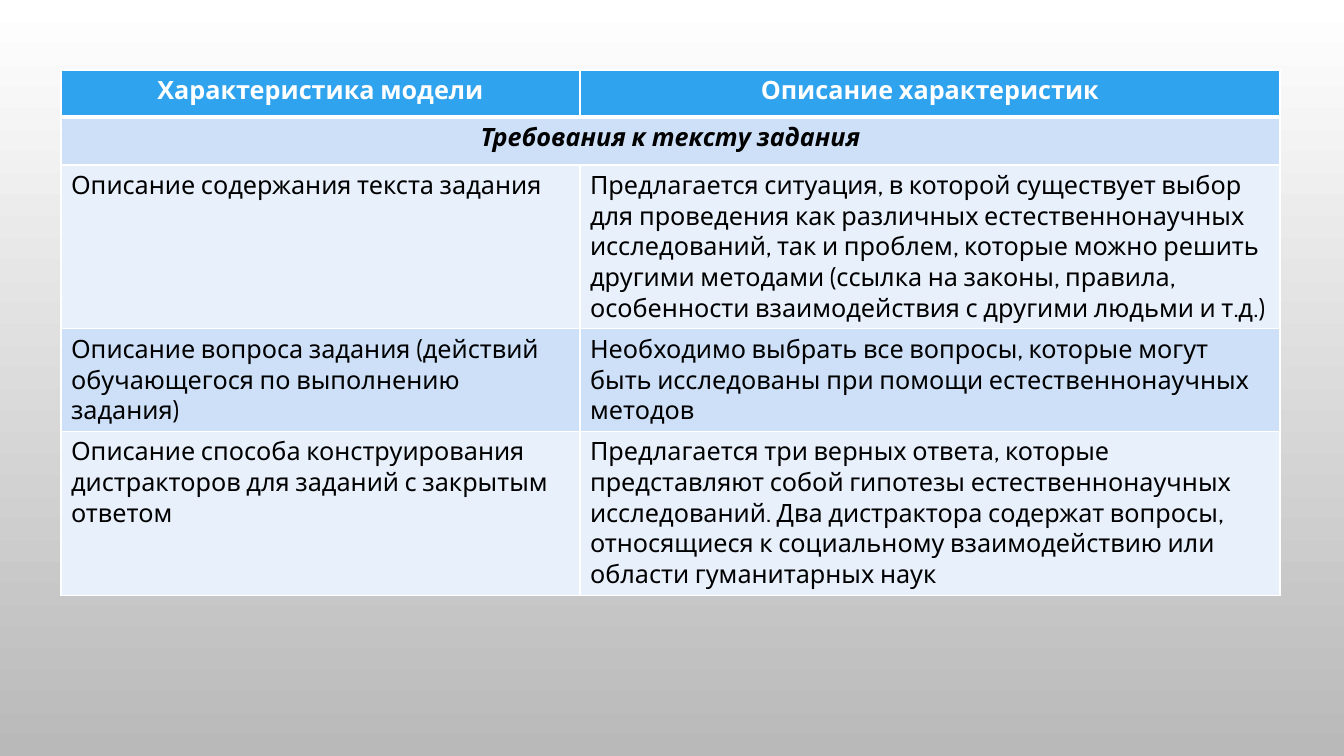
from pptx import Presentation
from pptx import util as u
from pptx.dml.color import RGBColor
from pptx.enum import text
from pptx.oxml import parse_xml
from pptx.oxml.ns import nsdecls

HEADER = ("Характеристика модели", "Описание характеристик")
SECTION = "Требования к тексту задания"
ROWS = [
    ("Описание содержания текста задания",
     "Предлагается ситуация, в которой существует выбор для проведения как различных "
     "естественнонаучных исследований, так и проблем, которые можно решить другими "
     "методами (ссылка на законы, правила, особенности взаимодействия с другими людьми и т.д.)"),
    ("Описание вопроса задания (действий обучающегося по выполнению задания)",
     "Необходимо выбрать все вопросы, которые могут быть исследованы при помощи "
     "естественнонаучных методов"),
    ("Описание способа конструирования дистракторов для заданий с закрытым ответом",
     "Предлагается три верных ответа, которые представляют собой гипотезы "
     "естественнонаучных исследований. Два дистрактора содержат вопросы, относящиеся "
     "к социальному взаимодействию или области гуманитарных наук"),
]
COLORS = {"white": "FFFFFF", "grey": "B9B9B9", "black": "000000",
          "header": "2FA3EE", "dark": "CDE0F8", "light": "E8F0FC"}
FONT, SIZE = "Cabin", 18
SLIDE = (1344, 756)
LEFT, TOP = 61, 70
COLS = (519, 700)
HEIGHTS = (47, 48, 161, 101, 161)
SCALE = 12192000 / SLIDE[0]


def px(n):
    return u.Emu(round(n * SCALE))


def rgb(name):
    return RGBColor.from_string(COLORS[name])


def write(cell, words, color="black", bold=False, italic=False, center=False):
    p = cell.text_frame.paragraphs[0]
    p.alignment = text.PP_ALIGN.CENTER if center else text.PP_ALIGN.LEFT
    r = p.add_run()
    r.text = words
    f = r.font
    f.name, f.size, f.bold, f.italic = FONT, u.Pt(SIZE), bold, italic
    f.color.rgb = rgb(color)


def style(cell, fill, bottom=1):
    tcPr = cell._tc.get_or_add_tcPr()
    for side, width in (("L", 1), ("R", 1), ("T", 1), ("B", bottom)):
        tcPr.append(parse_xml(
            f'<a:ln{side} {nsdecls("a")} w="{u.Pt(width)}"><a:solidFill>'
            f'<a:srgbClr val="{COLORS["white"]}"/></a:solidFill></a:ln{side}>'))
    cell.fill.solid()
    cell.fill.fore_color.rgb = rgb(fill)


prs = Presentation()
prs.slide_width, prs.slide_height = map(px, SLIDE)
s = prs.slides.add_slide(prs.slide_layouts[6])

bg = s.background.fill
bg.gradient()
bg.gradient_angle = 270
for stop, name in zip(bg.gradient_stops, ("white", "grey")):
    stop.color.rgb = rgb(name)

table = s.shapes.add_table(len(HEIGHTS), len(COLS), px(LEFT), px(TOP),
                           px(sum(COLS)), px(sum(HEIGHTS))).table
for col, width in zip(table.columns, COLS):
    col.width = px(width)
for i, (row, height) in enumerate(zip(table.rows, HEIGHTS)):
    row.height = px(height)
    for cell in row.cells:
        if i == 0:
            style(cell, "header", bottom=3)
        else:
            style(cell, "dark" if i % 2 else "light")

for cell, words in zip(table.rows[0].cells, HEADER):
    write(cell, words, color="white", bold=True, center=True)
table.cell(1, 0).merge(table.cell(1, 1))
write(table.cell(1, 0), SECTION, bold=True, italic=True, center=True)
for i, line in enumerate(ROWS, 2):
    for cell, words in zip(table.rows[i].cells, line):
        write(cell, words)

prs.save("out.pptx")
